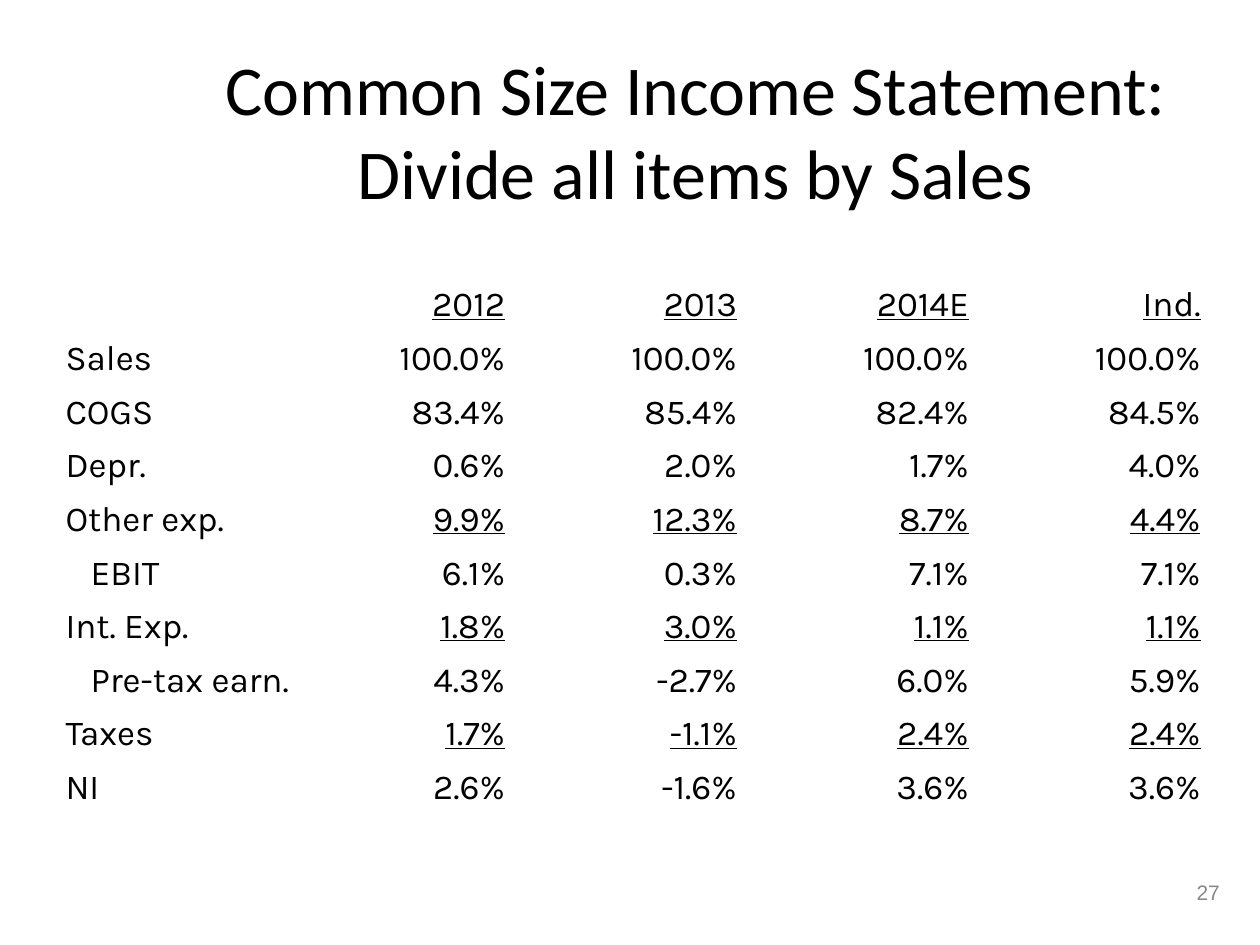
import pptx
import pptx.util
import pptx.dml.color
import pptx.enum.text

W, H = 10, 7.5
ALIGN = pptx.enum.text.PP_ALIGN
MIDDLE = pptx.enum.text.MSO_ANCHOR.MIDDLE

TITLE = ["Common Size Income Statement:", "Divide all items by Sales"]
COL_WIDTHS = [2.17, 1.52, 1.84, 1.84, 1.84]
ROW_HEIGHT = 0.41
INDENT = 0.2
UNDERLINED = {"", "Other exp.", "Int. Exp.", "Taxes"}
SUBTOTALS = {"EBIT", "Pre-tax earn."}
STATEMENT = [
    ["", "2012", "2013", "2014E", "Ind."],
    ["Sales", "100.0%", "100.0%", "100.0%", "100.0%"],
    ["COGS", "83.4%", "85.4%", "82.4%", "84.5%"],
    ["Depr.", "0.6%", "2.0%", "1.7%", "4.0%"],
    ["Other exp.", "9.9%", "12.3%", "8.7%", "4.4%"],
    ["EBIT", "6.1%", "0.3%", "7.1%", "7.1%"],
    ["Int. Exp.", "1.8%", "3.0%", "1.1%", "1.1%"],
    ["Pre-tax earn.", "4.3%", "-2.7%", "6.0%", "5.9%"],
    ["Taxes", "1.7%", "-1.1%", "2.4%", "2.4%"],
    ["NI", "2.6%", "-1.6%", "3.6%", "3.6%"],
]
TITLE_FONT = {"name": "Calibri", "size": pptx.util.Pt(40)}
TABLE_FONT = {"name": "Karla", "size": pptx.util.Pt(20)}
NUMBER_FONT = {"name": "Arial", "size": pptx.util.Pt(12)}


def set_color(font, color):
    font.color.rgb = pptx.dml.color.RGBColor.from_string(color)


def set_attrs(obj, values):
    for name, value in values.items():
        setattr(obj, name, value)


def inches(box):
    return [pptx.util.Inches(v) for v in box]


def write(p, lines, align, font, color="000000"):
    p.alignment = align
    for i, line in enumerate(lines):
        if i:
            p.add_line_break()
        r = p.add_run()
        r.text = line
        set_attrs(r.font, font)
        set_color(r.font, color)


def add_title(s, box):
    sp = s.shapes.title
    set_attrs(sp, dict(zip(("left", "top", "width", "height"), inches(box))))
    tf = sp.text_frame
    set_attrs(tf, {"word_wrap": True, "vertical_anchor": MIDDLE,
                   "auto_size": pptx.enum.text.MSO_AUTO_SIZE.NONE})
    write(tf.paragraphs[0], TITLE, ALIGN.CENTER, TITLE_FONT)


def add_statement(s, box):
    table = s.shapes.add_table(len(STATEMENT), len(COL_WIDTHS), *inches(box)).table
    set_attrs(table, {"first_row": False, "horz_banding": False})
    for column, width in zip(table.columns, COL_WIDTHS):
        column.width = pptx.util.Inches(width)
    for i, values in enumerate(STATEMENT):
        table.rows[i].height = pptx.util.Inches(ROW_HEIGHT)
        label = values[0]
        for j, value in enumerate(values):
            cell = table.cell(i, j)
            cell.fill.background()
            if not value:
                continue
            if value in SUBTOTALS:
                cell.margin_left += pptx.util.Inches(INDENT)
            underline = j > 0 and label in UNDERLINED
            write(cell.text_frame.paragraphs[0], [value],
                  ALIGN.RIGHT if j else ALIGN.LEFT,
                  {**TABLE_FONT, "underline": underline})


def add_page_number(s, box):
    tf = s.shapes.add_textbox(*inches(box)).text_frame
    set_attrs(tf, {"word_wrap": True, "vertical_anchor": MIDDLE})
    write(tf.paragraphs[0], ["27"], ALIGN.RIGHT, NUMBER_FONT, "898989")


def main():
    prs = pptx.Presentation()
    prs.slide_width, prs.slide_height = inches((W, H))
    s = prs.slides.add_slide(prs.slide_layouts[5])  # title only

    # Heading, statement, footer
    add_title(s, (1.26, 0.23, 8.52, 1.6))
    add_statement(s, (0.42, 2.21, sum(COL_WIDTHS), ROW_HEIGHT * len(STATEMENT)))
    add_page_number(s, (7.7, 6.83, 2.08, 0.5))
    prs.save("out.pptx")


if __name__ == "__main__":
    main()
